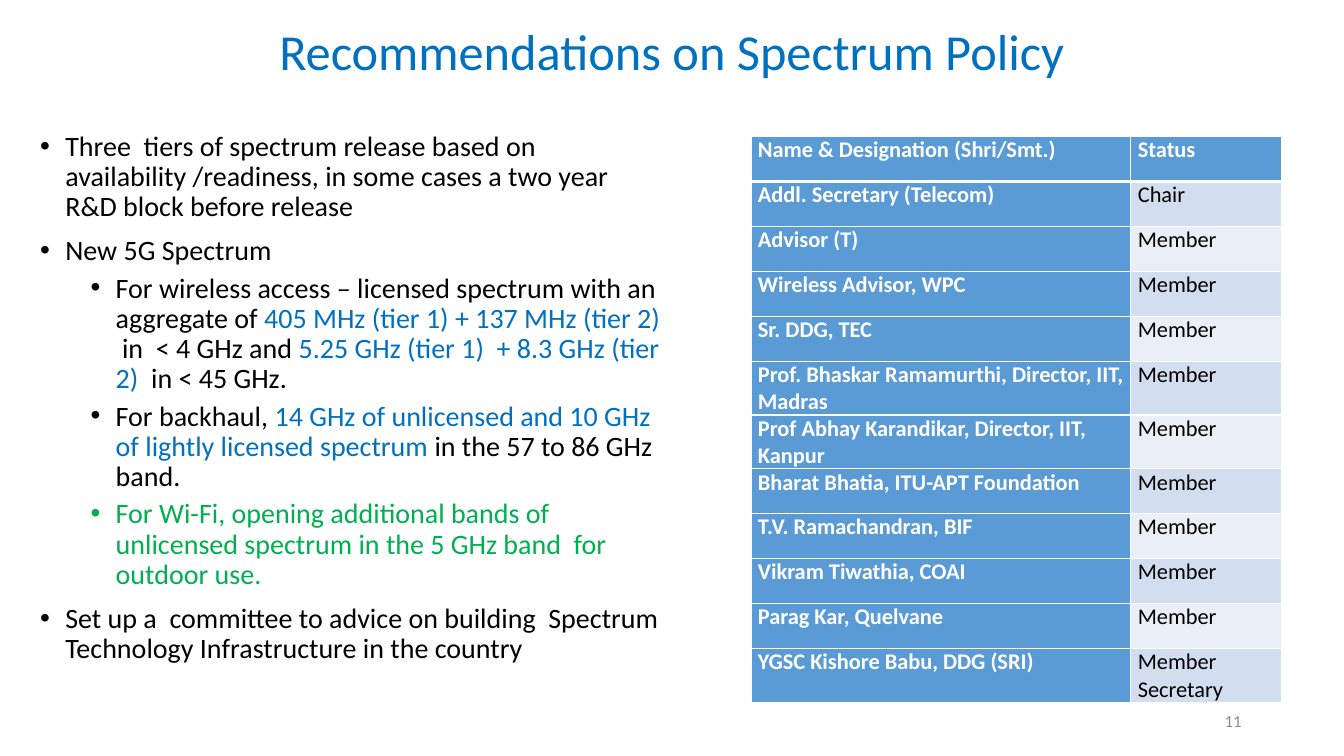
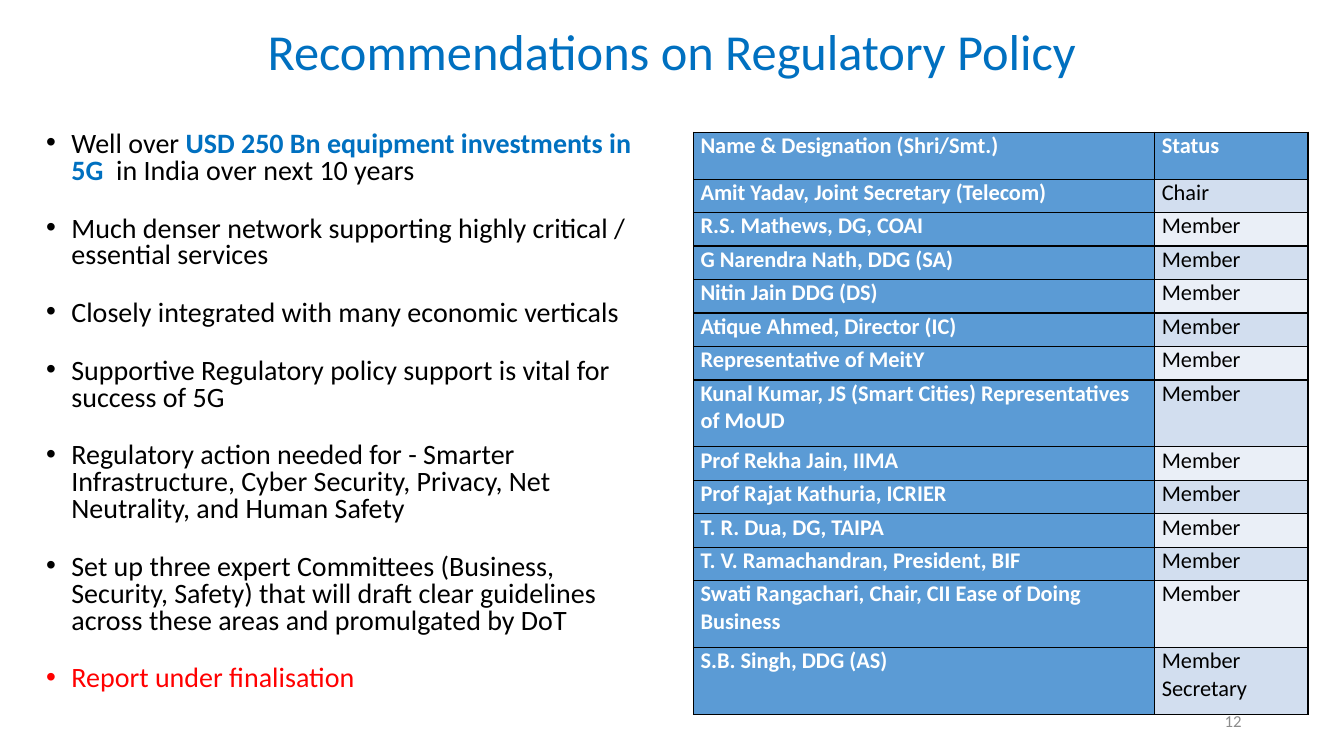
from lxml.etree import SubElement
from pptx import Presentation
from pptx.dml.color import RGBColor
from pptx.enum.text import MSO_ANCHOR, MSO_AUTO_SIZE, PP_ALIGN
from pptx.oxml.ns import qn
from pptx.util import Pt

HUES = {
    "blue": "0070C0", "green": "00B050", "red": "FF0000", "grey": "8C8C8C",
    "black": "000000", "white": "FFFFFF", "head": "5B9BD5",
    "dark": "D2DEEF", "light": "EAEFF7",
}
FONT = "Calibri"


def add_run(para, text, size, hue="black", bold=False):
    run = para.add_run()
    run.text = text
    run.font.name = FONT
    run.font.size = Pt(size)
    run.font.bold = bold
    run.font.color.rgb = RGBColor.from_string(HUES[hue])


def add_edge(cell, side, hue, width):
    props = cell._tc.get_or_add_tcPr()
    line = SubElement(props, qn("a:" + side), w=str(Pt(width)))
    fill = SubElement(line, qn("a:solidFill"))
    SubElement(fill, qn("a:srgbClr"), val=HUES[hue])


PAGES = [
    {
        "title": "Recommendations on Spectrum Policy",
        "num": "11",
        "body": (21.6, 90.7, 458.6, 409.7),
        "space": (0.9, 0),
        "points": [
            (0, [("Three  tiers of spectrum release based on availability /readiness, in some cases a two year R&D block before release", "black")]),
            (0, [("New 5G Spectrum", "black")]),
            (1, [("For wireless access – licensed spectrum with an aggregate of ", "black"),
                 ("405 MHz (tier 1) + 137 MHz (tier 2)", "blue"),
                 ("  in  < 4 GHz and ", "black"),
                 ("5.25 GHz (tier 1)  + 8.3 GHz (tier 2)  ", "blue"),
                 ("in < 45 GHz.", "black")]),
            (1, [("For backhaul, ", "black"),
                 ("14 GHz of unlicensed and 10 GHz of lightly licensed spectrum ", "blue"),
                 ("in the 57 to 86 GHz band.", "black")]),
            (1, [("For Wi-Fi, opening additional bands of unlicensed spectrum in the 5 GHz band  for outdoor use.", "green")]),
            (0, [("Set up a  committee to advice on building  Spectrum Technology Infrastructure in the country", "black")]),
        ],
        "spot": (536.4, 97.5),
        "cols": (271.4, 108),
        "rows": (32.1, 32.1),
        "tall": (),
        "edge": ("white", 3),
        "names": [
            "Addl. Secretary (Telecom)",
            "Advisor (T)",
            "Wireless Advisor, WPC",
            "Sr. DDG, TEC",
            "Prof. Bhaskar Ramamurthi, Director, IIT, Madras",
            "Prof Abhay Karandikar, Director, IIT, Kanpur",
            "Bharat Bhatia, ITU-APT Foundation",
            "T.V. Ramachandran, BIF",
            "Vikram Tiwathia, COAI",
            "Parag Kar, Quelvane",
            "YGSC Kishore Babu, DDG (SRI)",
        ],
    },
    {
        "title": "Recommendations on Regulatory Policy",
        "num": "12",
        "body": (25.9, 90.7, 439.2, 429.1),
        "space": (0.8, 12),
        "points": [
            (0, [("Well over ", "black"),
                 ("USD 250 Bn equipment investments in 5G", "blue", True),
                 ("  in India over next 10 years", "black")]),
            (0, [("Much denser network supporting highly critical / essential services", "black")]),
            (0, [("Closely integrated with many economic verticals", "black")]),
            (0, [("Supportive Regulatory policy support is vital for success of 5G", "black")]),
            (0, [("Regulatory action needed for - Smarter Infrastructure, Cyber Security, Privacy, Net Neutrality, and Human Safety", "black")]),
            (0, [("Set up three expert Committees (Business, Security, Safety) that will draft clear guidelines across these areas and promulgated by DoT", "black")]),
            (0, [("Report under finalisation", "red")]),
        ],
        "spot": (495.4, 94.4),
        "cols": (329.5, 109.4),
        "rows": (33.6, 23.9),
        "tall": (7, 12, 13),
        "edge": ("black", 1),
        "names": [
            "Amit Yadav, Joint Secretary (Telecom)",
            "R.S. Mathews, DG, COAI",
            "G Narendra Nath, DDG (SA)",
            "Nitin Jain DDG (DS)",
            "Atique Ahmed, Director (IC)",
            "Representative of MeitY",
            "Kunal Kumar, JS (Smart Cities) Representatives of MoUD",
            "Prof Rekha Jain, IIMA",
            "Prof Rajat Kathuria, ICRIER",
            "T. R. Dua, DG, TAIPA",
            "T. V. Ramachandran, President, BIF",
            "Swati Rangachari, Chair, CII Ease of Doing Business",
            "S.B. Singh, DDG (AS)",
        ],
    },
]

deck = Presentation()
deck.slide_width, deck.slide_height = Pt(960), Pt(540)

for page in PAGES:
    slide = deck.slides.add_slide(deck.slide_layouts[5])

    title = slide.shapes.title
    title.left, title.top, title.width, title.height = Pt(0), Pt(0), Pt(960), Pt(77)
    title.fill.solid()
    title.fill.fore_color.rgb = RGBColor.from_string(HUES["white"])
    frame = title.text_frame
    frame.auto_size = MSO_AUTO_SIZE.NONE
    frame.vertical_anchor = MSO_ANCHOR.MIDDLE
    para = frame.paragraphs[0]
    para.alignment = PP_ALIGN.CENTER
    para.line_spacing = 0.9
    add_run(para, page["title"], 36, "blue")

    frame = slide.shapes.add_textbox(*map(Pt, page["body"])).text_frame
    frame.word_wrap = True
    pitch, after = page["space"]
    for i, (level, runs) in enumerate(page["points"]):
        para = frame.add_paragraph() if i else frame.paragraphs[0]
        para.level = level
        para.line_spacing = pitch
        para.space_before = Pt(5 if level else 10)
        para.space_after = Pt(after)
        props = para._p.get_or_add_pPr()
        props.set("marL", str(Pt(18 + 36 * level)))
        props.set("indent", str(Pt(-18)))
        SubElement(props, qn("a:buFont"), typeface="Arial")
        SubElement(props, qn("a:buChar"), char="•")
        for text, *look in runs:
            add_run(para, text, 20, *look)

    frame = slide.shapes.add_textbox(Pt(678), Pt(500.5), Pt(216), Pt(28.8)).text_frame
    frame.word_wrap = True
    frame.vertical_anchor = MSO_ANCHOR.MIDDLE
    para = frame.paragraphs[0]
    para.alignment = PP_ALIGN.RIGHT
    add_run(para, page["num"], 12, "grey")

    names = page["names"]
    roles = ["Chair"] + ["Member"] * (len(names) - 2) + ["Member Secretary"]
    cells = [("Name & Designation (Shri/Smt.)", "Status"), *zip(names, roles)]
    first, rest = page["rows"]
    highs = [first] + [rest * (2 if r in page["tall"] else 1) for r in range(1, len(cells))]
    size = sum(page["cols"]), sum(highs)
    table = slide.shapes.add_table(len(cells), 2, *map(Pt, page["spot"] + size)).table
    for col, width in zip(table.columns, page["cols"]):
        col.width = Pt(width)
    hue, thick = page["edge"]
    for r, texts in enumerate(cells):
        table.rows[r].height = Pt(highs[r])
        for c, text in enumerate(texts):
            cell = table.cell(r, c)
            cell.margin_left = cell.margin_right = Pt(5)
            cell.margin_top = cell.margin_bottom = Pt(0)
            for side in ("lnL", "lnR", "lnT", "lnB"):
                rule = (r, side) in ((0, "lnB"), (1, "lnT"))
                add_edge(cell, side, hue, thick if rule else 1)
            head = r == 0 or c == 0
            fill = "head" if head else "dark" if r % 2 else "light"
            cell.fill.solid()
            cell.fill.fore_color.rgb = RGBColor.from_string(HUES[fill])
            para = cell.text_frame.paragraphs[0]
            add_run(para, text, 16, "white" if head else "black", head)

deck.save("out.pptx")
